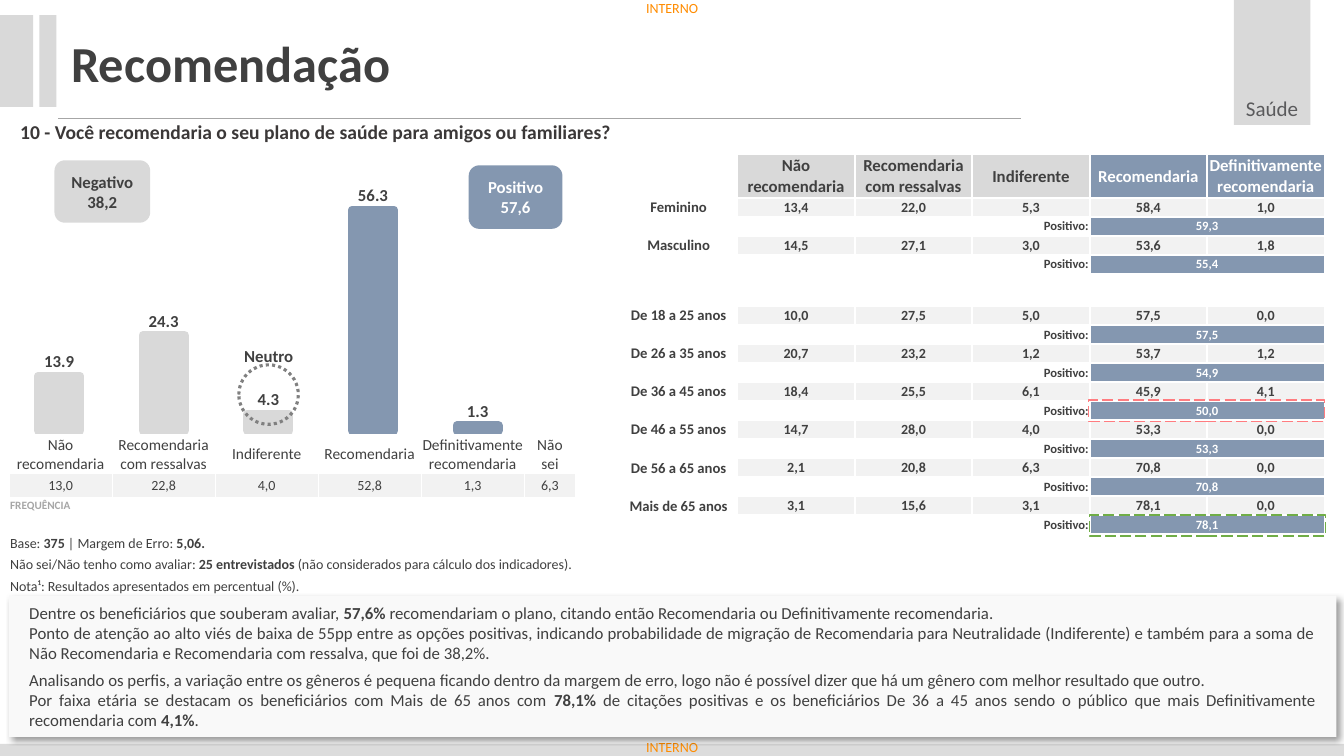
from lxml import etree
from pptx import Presentation
from pptx.chart.data import CategoryChartData
from pptx.dml.color import RGBColor
from pptx.enum.chart import XL_CHART_TYPE, XL_LABEL_POSITION
from pptx.enum.dml import MSO_LINE
from pptx.enum.shapes import MSO_CONNECTOR, MSO_SHAPE
from pptx.enum.text import MSO_ANCHOR, PP_ALIGN
from pptx.oxml.ns import qn
from pptx.util import Pt

RECT, ROUND, OVAL = MSO_SHAPE.RECTANGLE, MSO_SHAPE.ROUNDED_RECTANGLE, MSO_SHAPE.OVAL
LEFT, MID, RIGHT, JUST = PP_ALIGN.LEFT, PP_ALIGN.CENTER, PP_ALIGN.RIGHT, PP_ALIGN.JUSTIFY
TOP, MIDDLE = MSO_ANCHOR.TOP, MSO_ANCHOR.MIDDLE
DOTS, DASH = MSO_LINE.ROUND_DOT, MSO_LINE.LONG_DASH
COLUMN, ABOVE = XL_CHART_TYPE.COLUMN_CLUSTERED, XL_LABEL_POSITION.OUTSIDE_END


class Theme:
    font = "Calibri"
    ink, dark, soft, white = "404040", "3B3838", "5A5A5C", "FFFFFF"
    gray, pale, panel, foot = "D9D9D9", "F2F2F2", "F9F9F9", "DCDCDC"
    blue, rule, ring, mark = "8497B0", "A6A6A6", "808080", "FF8C00"
    good, bad, black = "70AD47", "FF7C80", "000000"
    title, tag, ask, body, head, row, note, sub, tiny = 36, 15, 14, 12, 11, 10.5, 10, 9, 8


# Content: in a tuple of runs, every second run is bold
TITLE, TAG, STAMP = "Recomendação", "Saúde", "INTERNO"
ASK = "10 - Você recomendaria o seu plano de saúde para amigos ou familiares?"
BARS = [1.3, 56.3, 4.3, 24.3, 13.9]
FREQ = [("Não recomendaria", "13,0"), ("Recomendaria com ressalvas", "22,8"),
        ("Indiferente", "4,0"), ("Recomendaria", "52,8"),
        ("Definitivamente recomendaria", "1,3"), (["Não", "sei"], "6,3")]
FREQ_TAG = "FREQUÊNCIA"
NOTES = [
    ("Base: ", "375 ", "| Margem de Erro: ", "5,06."),
    ("Não sei/Não tenho como avaliar:", " 25 entrevistados",
     " (não considerados para cálculo dos indicadores)."),
    ("Nota¹: Resultados apresentados em percentual (%).",),
]
HEADS = ["Não\nrecomendaria", "Recomendaria com ressalvas", "Indiferente",
         "Recomendaria", "Definitivamente\nrecomendaria"]
SUM = "Positivo:"
GROUPS = [
    [("Feminino", "13,4 22,0 5,3 58,4 1,0", "59,3"),
     ("Masculino", "14,5 27,1 3,0 53,6 1,8", "55,4")],
    [("De 18 a 25 anos", "10,0 27,5 5,0 57,5 0,0", "57,5"),
     ("De 26 a 35 anos", "20,7 23,2 1,2 53,7 1,2", "54,9"),
     ("De 36 a 45 anos", "18,4 25,5 6,1 45,9 4,1", "50,0"),
     ("De 46 a 55 anos", "14,7 28,0 4,0 53,3 0,0", "53,3"),
     ("De 56 a 65 anos", "2,1 20,8 6,3 70,8 0,0", "70,8"),
     ("Mais de 65 anos", "3,1 15,6 3,1 78,1 0,0", "78,1")],
]
SAY = [
    ("Dentre os beneficiários que souberam avaliar, ", "57,6% ",
     "recomendariam o plano, citando então Recomendaria ou Definitivamente recomendaria."),
    ("Ponto de atenção ao alto viés de baixa de 55pp entre as opções positivas, indicando "
     "probabilidade de migração de Recomendaria para Neutralidade (Indiferente) e também para "
     "a soma de Não Recomendaria e Recomendaria com ressalva, que foi de 38,2%.",),
    ("Analisando os perfis, a variação entre os gêneros é pequena ficando dentro da margem de "
     "erro, logo não é possível dizer que há um gênero com melhor resultado que outro.",),
    ("Por faixa etária se destacam os beneficiários com Mais de 65 anos com ", "78,1% ",
     "de citações positivas e os beneficiários De 36 a 45 anos sendo o público que mais "
     "Definitivamente recomendaria com ", "4,1%", "."),
]

deck = Presentation()
deck.slide_width, deck.slide_height = Pt(960), Pt(540)
slide = deck.slides.add_slide(deck.slide_layouts[6])
shapes = slide.shapes


# Helpers
def rgb(code):
    return RGBColor.from_string(code)


def node(root, tag, **attrs):
    return etree.SubElement(root, qn(tag), {k: str(v) for k, v in attrs.items()})


def write(frame, paras, size, color=Theme.ink, bold=False, align=LEFT):
    for i, runs in enumerate([paras] if isinstance(paras, str) else paras):
        para = frame.paragraphs[0] if i == 0 else frame.add_paragraph()
        para.alignment = align
        for j, text in enumerate([runs] if isinstance(runs, str) else runs):
            for k, line in enumerate(text.split("\n")):
                if k:
                    para.add_line_break()
                run = para.add_run()
                run.text = line
                run.font.name, run.font.size = Theme.font, Pt(size)
                run.font.bold, run.font.color.rgb = bold or j % 2 == 1, rgb(color)


def pad(item, side, top, base):
    item.margin_left = item.margin_right = Pt(side)
    item.margin_top, item.margin_bottom = Pt(top), Pt(base)


def label(box, text, size, color, inset=(7.2, 3.6), **look):
    frame = shapes.add_textbox(*map(Pt, box)).text_frame
    frame.word_wrap = True
    pad(frame, inset[0], inset[1], inset[1])
    write(frame, text, size, color, **look)


def block(kind, box, fill=None, line=None):
    item = shapes.add_shape(kind, *map(Pt, box))
    item.shadow.inherit = False
    if fill:
        item.fill.solid()
        item.fill.fore_color.rgb = rgb(fill)
    else:
        item.fill.background()
    if line:
        color, width, dash = line
        item.line.color.rgb = rgb(color)
        item.line.width, item.line.dash_style = Pt(width), dash
    else:
        item.line.fill.background()
    item.text_frame.word_wrap = True
    item.text_frame.vertical_anchor = MIDDLE
    return item


def badge(box, text, fill=None, color=Theme.ink):
    write(block(ROUND, box, fill).text_frame, text, Theme.body, color, True, MID)


def grid(left, top, cols, rows, edge=0):
    table = shapes.add_table(len(rows), len(cols), Pt(left), Pt(top),
                             Pt(sum(cols)), Pt(sum(rows))).table
    table.first_row = table.horz_banding = False
    for col, width in zip(table.columns, cols):
        col.width = Pt(width)
    for row, height in zip(table.rows, rows):
        row.height = Pt(height)
    for cell in table.iter_cells():
        pad(cell, 0.72, 0.72, 0)
        end = cell.text_frame.paragraphs[0]._p.get_or_add_endParaRPr()
        end.set("sz", str(Theme.tiny * 100))
        for side in "LRTB" if edge else "":
            line = node(cell._tc.get_or_add_tcPr(), f"a:ln{side}", w=Pt(edge))
            node(node(line, "a:solidFill"), "a:srgbClr", val=Theme.white)
        cell.fill.background()
    return table


def put(cell, text, size, fill=None, anchor=MIDDLE, color=Theme.ink, bold=False, align=MID):
    cell.vertical_anchor = anchor
    if fill:
        cell.fill.solid()
        cell.fill.fore_color.rgb = rgb(fill)
    write(cell.text_frame, text, size, color, bold, align)


# Frame of the slide
block(RECT, (0, 531.4, 960, 8.6), Theme.foot)
rule = shapes.add_connector(MSO_CONNECTOR.STRAIGHT, Pt(41.8), Pt(84.2), Pt(729.4), Pt(84.2))
rule.line.color.rgb, rule.line.width = rgb(Theme.rule), Pt(0.5)
node(rule._element.spPr, "a:effectLst")
for box in [(-0.7, 10.8, 24.5, 65.5), (28.1, 10.8, 12.2, 65.5), (881.3, 0, 54.7, 89.3)]:
    block(RECT, box, Theme.gray)
for y in (0, 527.8):
    label((461.5, y, 39.6, 12.2), STAMP, Theme.note, Theme.mark, (0, 0))

# Bar chart
data = CategoryChartData()
data.categories = [str(i + 1) for i in range(len(BARS))]
data.add_series("Series 1", BARS)
chart = shapes.add_chart(COLUMN, Pt(-7.9), Pt(119.5), Pt(398.9), Pt(234), data).chart
chart.has_legend = chart.has_title = False
chart.font.name, chart.font.size = Theme.font, Pt(Theme.note)
chart.font.color.rgb = rgb(Theme.black)
cats, vals = chart.category_axis, chart.value_axis
cats.reverse_order = True
vals.minimum_scale, vals.maximum_scale = 0, 60
vals.has_major_gridlines = cats.visible = vals.visible = False
plot = chart.plots[0]
plot.gap_width, plot.overlap, plot.vary_by_categories = 150, -25, False
for i in range(len(BARS)):
    shade = rgb(Theme.blue if i < 2 else Theme.gray)
    form = plot.series[0].points[i].format
    form.fill.solid()
    form.fill.fore_color.rgb = form.line.color.rgb = shade
    form.line.width = Pt(6)
plot.has_data_labels = True
tags = plot.data_labels
tags.show_value, tags.position = True, ABOVE
tags.number_format, tags.number_format_is_linked = "0.0", False
tags.font.name, tags.font.size, tags.font.bold = Theme.font, Pt(Theme.body), True
tags.font.color.rgb = rgb(Theme.ink)
area = chart._chartSpace.find(".//" + qn("c:plotArea"))
for old in area.findall(qn("c:layout")):
    area.remove(old)
lay = etree.Element(qn("c:layout"))
area.insert(0, lay)
lay = node(lay, "c:manualLayout")
for key, val in [("layoutTarget", "inner"), ("xMode", "edge"), ("yMode", "edge"),
                 ("x", 0.032), ("y", 0.086), ("w", 0.937), ("h", 0.718)]:
    node(lay, "c:" + key, val=val)

label((6.5, 81.4, 823, 25.2), ASK, Theme.ask, Theme.dark, (7.9, 4.3), bold=True)

# Frequency table
freq = grid(6.5, 310.3, [73.6] * 5 + [36.8], [27.7, 17.3, 17.3], 1)
for i, (name, share) in enumerate(FREQ):
    put(freq.cell(0, i), name, Theme.head)
    put(freq.cell(1, i), share, Theme.note, Theme.pale)
freq.cell(2, 0).merge(freq.cell(2, 5))
put(freq.cell(2, 0), FREQ_TAG, Theme.tiny, anchor=TOP, color=Theme.rule, bold=True, align=LEFT)

# Notes
notes = grid(6.5, 381.6, [526.3], [15.3] * 3)
for i, runs in enumerate(NOTES):
    put(notes.cell(i, 0), [runs], Theme.note, anchor=TOP, align=LEFT)

# Neutral mark
block(OVAL, (170.6, 260.6, 42.5, 42.5), line=(Theme.ring, 2.25, DOTS))
badge((164.9, 247, 54, 13.7), "Neutro")

# Profile table: two rows a profile, a gap between groups
step = 13.6
high = [31] + [step] * 4 + [23] + [step] * 12
prof = grid(442.8, 110.2, [83.9] * 6, high, 1.5)
for i, name in enumerate(HEADS):
    fill, color = (Theme.gray, Theme.ink) if i < 3 else (Theme.blue, Theme.white)
    put(prof.cell(0, i + 1), name, Theme.body, fill, color=color, bold=True)
at = 1
for group in GROUPS:
    for name, shares, total in group:
        put(prof.cell(at, 0), name, Theme.row, bold=True)
        for i, share in enumerate(shares.split()):
            put(prof.cell(at, i + 1), share, Theme.note, Theme.pale, bold=True)
        put(prof.cell(at + 1, 3), SUM, Theme.sub, bold=True, align=RIGHT)
        prof.cell(at + 1, 4).merge(prof.cell(at + 1, 5))
        put(prof.cell(at + 1, 4), total, Theme.sub, Theme.blue, color=Theme.white, bold=True)
        at += 2
    at += 1

# Badges, marks and titles
badge((38.9, 114.5, 68.4, 44.6), "Negativo 38,2", Theme.gray)
for x, y, color in [(778.3, 367.9, Theme.good), (777.6, 285.8, Theme.bad)]:
    block(RECT, (x, y, 168.5, 15.1), line=(color, 1, DASH))
label((874.1, 64.8, 69.1, 25.2), TAG, Theme.tag, Theme.soft, align=MID)
label((43.9, 19.4, 347.8, 51.1), TITLE, Theme.title, Theme.ink, bold=True)

# Conclusions
panel = block(RECT, (6.5, 425.5, 948.2, 100.8), Theme.panel)
cast = node(panel._element.spPr.find(qn("a:effectLst")), "a:outerShdw", blurRad=Pt(4),
            dist=Pt(3), dir=45 * 60000, algn="tl", rotWithShape=0)
node(node(cast, "a:srgbClr", val=Theme.black), "a:alpha", val=40000)
pad(panel.text_frame, 14.4, 2.9, 2.9)
write(panel.text_frame, SAY, Theme.body, align=JUST)
panel.text_frame.paragraphs[2].space_before = Pt(5)
badge((334.8, 118.1, 67, 45.4), "Positivo 57,6", Theme.blue, Theme.white)

deck.save("out.pptx")
